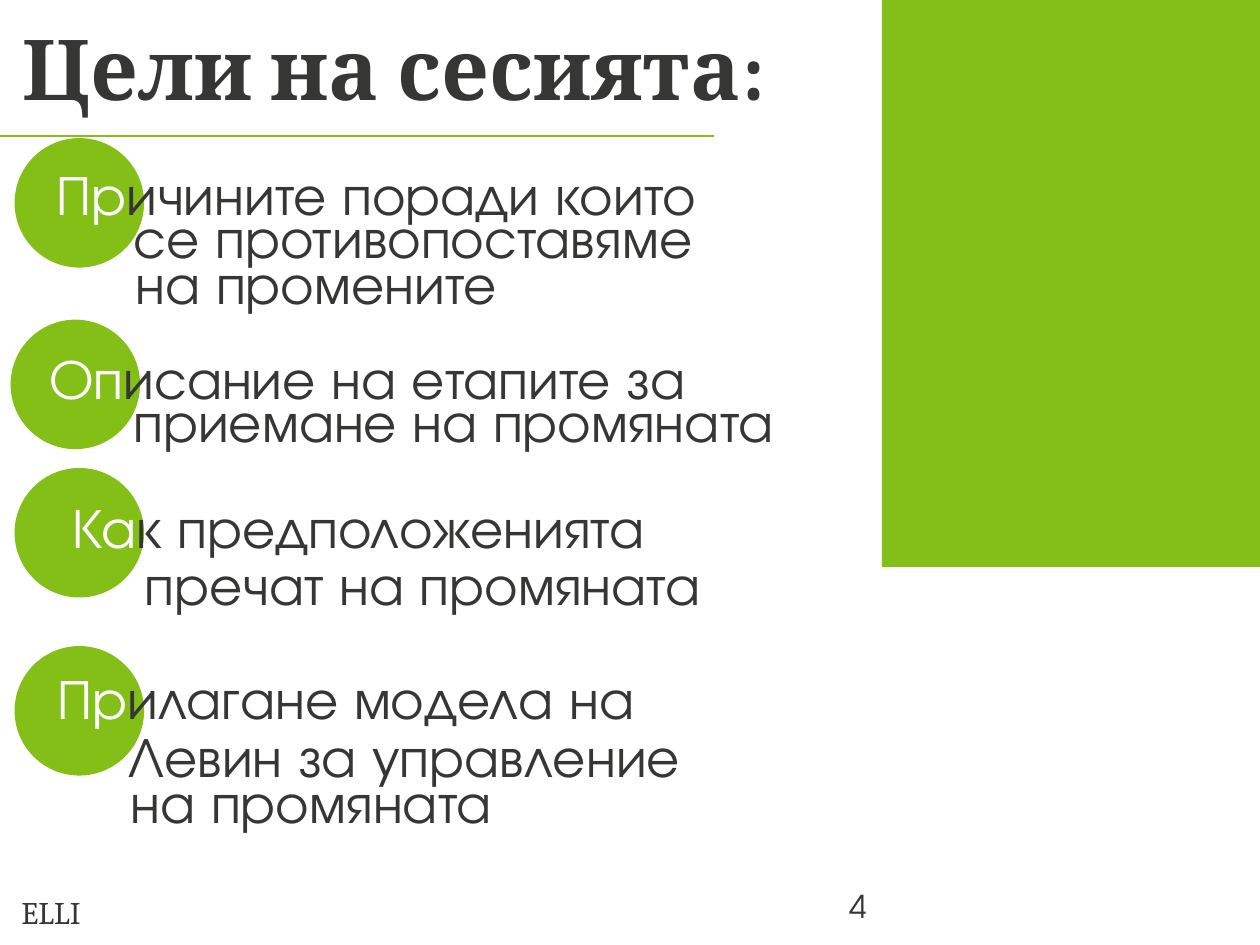
from pptx import Presentation
from pptx.dml.color import RGBColor
from pptx.enum.shapes import MSO_CONNECTOR, MSO_SHAPE
from pptx.enum.text import MSO_ANCHOR
from pptx.oxml.ns import qn
from pptx.util import Cm, Pt
from lxml.etree import SubElement

GREEN = RGBColor(0x83, 0xBF, 0x17)
DARK = RGBColor(0x36, 0x36, 0x35)
WHITE = RGBColor(0xFF, 0xFF, 0xFF)

SERIF = "Cambria"
SANS = "TeX Gyre Adventor"

CIRCLE_SIZE = 2.54
LEAD_HEIGHT = 1.9
LINE_HEIGHT = 1.63

# Each goal: circle position, white letters, then lines as (left, top, width, text)
GOALS = [
    ((0.33, 2.82), "Пр", [
        (0.89, 3.1, 17.58, "ичините поради които"),
        (2.44, 3.96, 16.38, "се противопоставяме"),
        (2.49, 4.88, 8.74, "на промените"),
    ]),
    ((0.25, 6.48), "Оп", [
        (0.74, 6.81, 16.87, "исание на етапите за"),
        (2.44, 7.67, 16.87, "приемане на промяната"),
    ]),
    ((0.33, 9.47), "Ка", [
        (1.22, 9.8, 15.09, "к предположенията"),
        (2.67, 10.95, 14.83, "пречат на промяната"),
    ]),
    ((0.33, 13.06), "Пр", [
        (0.91, 13.26, 17.5, "илагане модела на"),
        (2.34, 14.43, 15.88, "Левин за управление"),
        (2.39, 15.34, 9.27, "на промяната"),
    ]),
]


class SlideBuilder:
    """Adds styled elements to one slide; all lengths are in centimetres."""

    def __init__(self, slide):
        self.slide = slide

    def add_block(self, kind, left, top, width, height):
        shape = self.slide.shapes.add_shape(
            kind, Cm(left), Cm(top), Cm(width), Cm(height))
        shape.shadow.inherit = False
        shape.fill.solid()
        shape.fill.fore_color.rgb = GREEN
        shape.line.color.rgb = GREEN
        shape.line.width = Pt(2)
        return shape

    def add_rule(self, left, top, right):
        connector = self.slide.shapes.add_connector(
            MSO_CONNECTOR.STRAIGHT, Cm(left), Cm(top), Cm(right), Cm(top))
        connector.line.color.rgb = GREEN
        connector.line.width = Pt(0.75)
        SubElement(connector.element.spPr, qn("a:effectLst"))

    def add_text(self, left, top, width, height, text, size=32, font=SANS,
                 bold=False, lead="", anchor=MSO_ANCHOR.TOP):
        box = self.slide.shapes.add_textbox(
            Cm(left), Cm(top), Cm(width), Cm(height))
        frame = box.text_frame
        frame.word_wrap = True
        frame.vertical_anchor = anchor
        paragraph = frame.paragraphs[0]
        paragraph.font.name = font
        paragraph.font.size = Pt(size)
        paragraph.font.bold = bold
        for part, color in ((lead, WHITE), (text, DARK)):
            if part:
                run = paragraph.add_run()
                run.text = part
                run.font.color.rgb = color

    def add_goal(self, circle, lead, lines):
        self.add_block(MSO_SHAPE.OVAL, *circle, CIRCLE_SIZE, CIRCLE_SIZE)
        (left, top, width, text), *rest = lines
        self.add_text(left, top, width, LEAD_HEIGHT, text, lead=lead)
        for left, top, width, text in rest:
            self.add_text(left, top, width, LINE_HEIGHT, text)


def main():
    presentation = Presentation()
    presentation.slide_width = Cm(25.4)
    presentation.slide_height = Cm(19.05)
    slide = presentation.slides.add_slide(presentation.slide_layouts[6])
    builder = SlideBuilder(slide)

    # Side panel and title
    panel = builder.add_block(MSO_SHAPE.RECTANGLE, 17.78, 0, 7.62, 11.43)
    panel.line.fill.background()
    builder.add_rule(0, 2.74, 14.4)
    builder.add_text(0.2, 0.3, 16.94, 2.11, "Цели на сесията:", size=48,
                     font=SERIF, bold=True, anchor=MSO_ANCHOR.MIDDLE)

    # Goals
    for circle, lead, lines in GOALS:
        builder.add_goal(circle, lead, lines)

    # Footer
    builder.add_text(0.18, 17.88, 3.33, 1.02, "ELLI", size=18, font=SERIF)
    builder.add_text(16.87, 17.75, 1.27, 1.02, "4", size=18)

    presentation.save("out.pptx")


if __name__ == "__main__":
    main()
